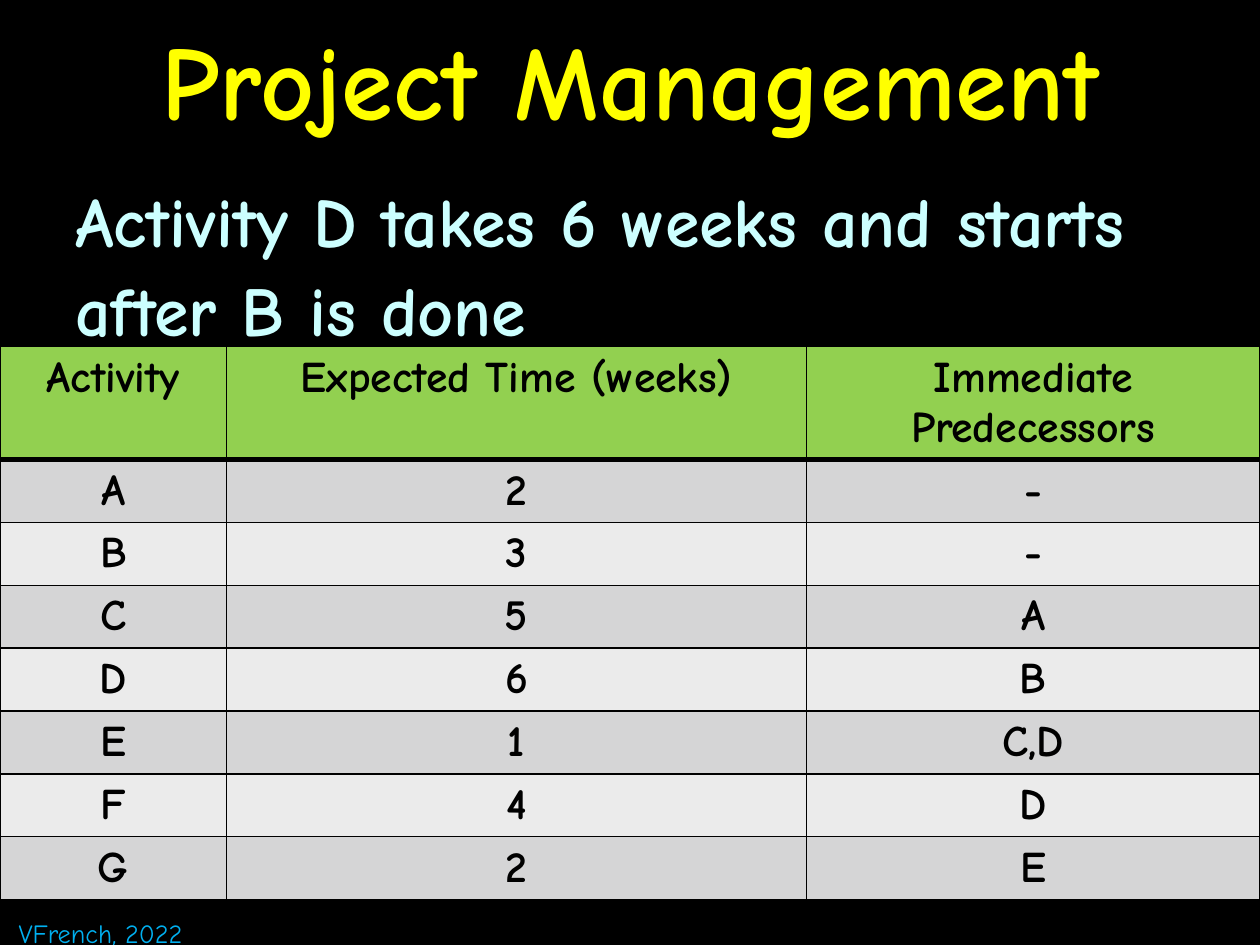
"""Build a project management slide with an activity table."""
from dataclasses import dataclass

from lxml import etree
from pptx import Presentation
from pptx import util as u
from pptx.dml.color import RGBColor
from pptx.enum import text
from pptx.oxml.ns import qn

WIDTH, HEIGHT = 10, 7.5
FONT = "Comic Neue"
COLORS = {
    "background": "000000", "title": "FFFF00", "body": "CCFFFF", "footer": "00B0F0",
    "ink": "000000", "header": "92D050", "odd": "D5D5D6", "even": "EBEBEB",
}
FRAME = {"word_wrap": True, "auto_size": text.MSO_AUTO_SIZE.NONE}
COLUMN_SHARES = (0.18, 0.46, 0.36)
HEADER_HEIGHT, ROW_HEIGHT = 0.7, 0.41
ROWS = (
    ("Activity", "Expected Time (weeks)", "Immediate\nPredecessors"),
    ("A", "2", "-"),
    ("B", "3", "-"),
    ("C", "5", "A"),
    ("D", "6", "B"),
    ("E", "1", "C,D"),
    ("F", "4", "D"),
    ("G", "2", "E"),
)


@dataclass(frozen=True)
class Box:
    left: float
    top: float
    width: float
    height: float

    def emu(self) -> tuple:
        return tuple(u.Inches(v) for v in (self.left, self.top, self.width, self.height))


@dataclass(frozen=True)
class Style:
    size: float
    color: str
    bold: bool = True
    align: text.PP_ALIGN = text.PP_ALIGN.CENTER
    spacing: float = 1.0


TITLE = Style(60, "title")
BODY = Style(40, "body", align=text.PP_ALIGN.LEFT, spacing=1.05)
FOOTER = Style(15, "footer", bold=False, align=text.PP_ALIGN.LEFT)
CELL = Style(25, "ink")


def apply(target, values: dict) -> None:
    for name, value in values.items():
        setattr(target, name, value)


def rgb(name: str) -> RGBColor:
    return RGBColor.from_string(COLORS[name])


def write(tf, content: str, style: Style) -> None:
    tf.text = content
    for p in tf.paragraphs:
        apply(p, {"alignment": style.align, "line_spacing": style.spacing})
        for r in p.runs:
            apply(r.font, {"name": FONT, "size": u.Pt(style.size), "bold": style.bold})
            r.font.color.rgb = rgb(style.color)


def add_text(s, box: Box, content: str, style: Style) -> None:
    tf = s.shapes.add_textbox(*box.emu()).text_frame
    apply(tf, FRAME)
    write(tf, content, style)


def set_borders(cell, widths: dict) -> None:
    tc_pr = cell._tc.get_or_add_tcPr()
    for i, (side, points) in enumerate(widths.items()):
        ln = etree.Element(qn(f"a:ln{side}"), w=str(u.Pt(points)))
        fill = etree.SubElement(ln, qn("a:solidFill"))
        etree.SubElement(fill, qn("a:srgbClr"), val=COLORS["ink"])
        tc_pr.insert(i, ln)


def add_activities(s, box: Box) -> None:
    table = s.shapes.add_table(len(ROWS), len(COLUMN_SHARES), *box.emu()).table
    apply(table, {"first_row": True, "horz_banding": False})
    for column, share in zip(table.columns, COLUMN_SHARES):
        column.width = u.Inches(share * box.width)
    for i, values in enumerate(ROWS):
        table.rows[i].height = u.Inches(ROW_HEIGHT if i else HEADER_HEIGHT)
        fill = "header" if i == 0 else "odd" if i % 2 else "even"
        widths = {"L": 1, "R": 1, "T": 3 if i == 1 else 1, "B": 1 if i else 3}
        for cell, value in zip(table.rows[i].cells, values):
            write(cell.text_frame, value, CELL)
            cell.fill.solid()
            cell.fill.fore_color.rgb = rgb(fill)
            set_borders(cell, widths)


def main() -> None:
    prs = Presentation()
    apply(prs, {"slide_width": u.Inches(WIDTH), "slide_height": u.Inches(HEIGHT)})
    s = prs.slides.add_slide(prs.slide_layouts.get_by_name("Title Only"))
    s.background.fill.solid()
    s.background.fill.fore_color.rgb = rgb("background")

    title = s.shapes.title
    left, top, width, height = Box(0, 0, WIDTH, HEIGHT / 6).emu()
    apply(title, {"left": left, "top": top, "width": width, "height": height})
    apply(title.text_frame, FRAME | {"vertical_anchor": text.MSO_ANCHOR.MIDDLE})
    write(title.text_frame, "Project Management", TITLE)

    add_text(s, Box(0.05 * WIDTH, 1.33, 0.9 * WIDTH, HEIGHT - 1.33),
             "Activity D takes 6 weeks and starts after B is done", BODY)
    table_height = HEADER_HEIGHT + ROW_HEIGHT * (len(ROWS) - 1)
    add_activities(s, Box(0, 2.75, WIDTH, table_height))
    add_text(s, Box(0.05, 7.23, 0.17 * WIDTH, 0.35), "VFrench, 2022", FOOTER)
    prs.save("out.pptx")


if __name__ == "__main__":
    main()
